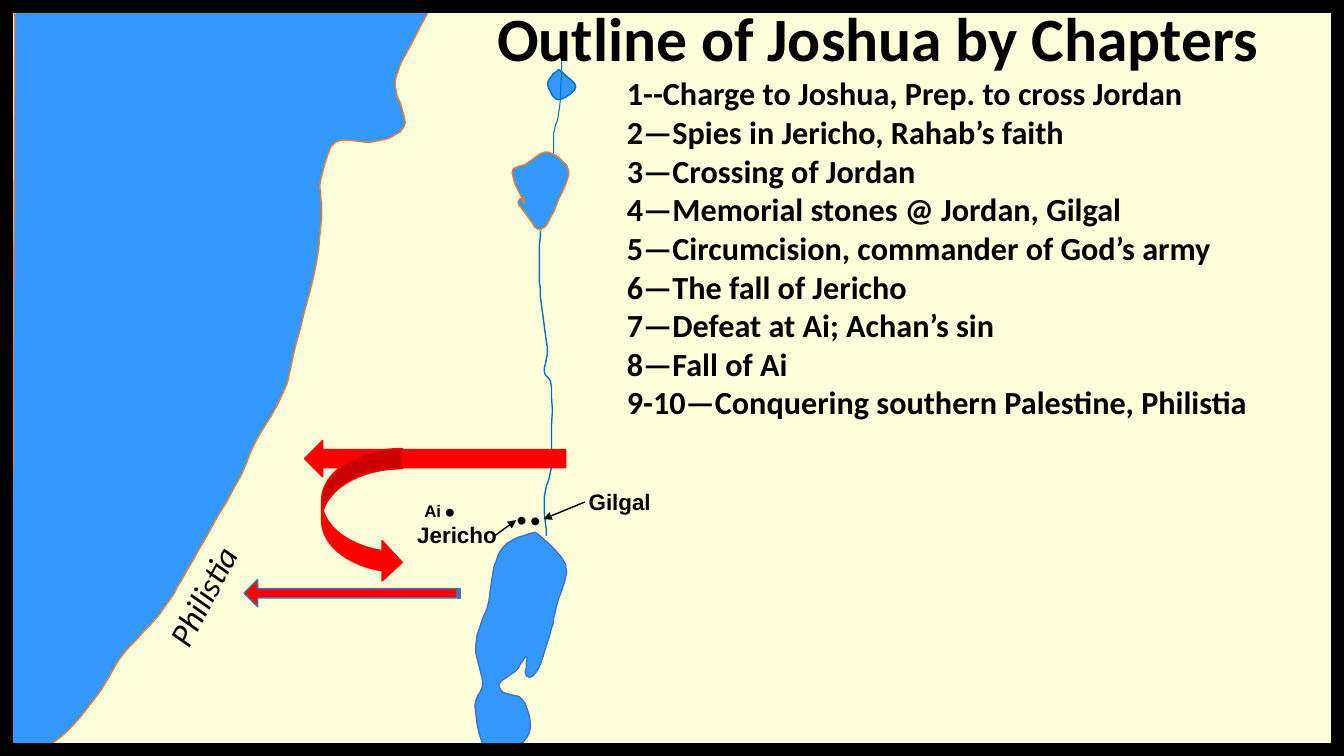
from dataclasses import dataclass

from lxml import etree
from pptx import Presentation
from pptx.dml.color import RGBColor
from pptx.enum.shapes import MSO_CONNECTOR, MSO_SHAPE
from pptx.enum.text import MSO_AUTO_SIZE, PP_ALIGN
from pptx.oxml.ns import qn
from pptx.util import Pt

PX = 9144  # EMU; 100 px to the inch
WIDTH, HEIGHT = 1333, 750
CURVE_STEPS = 5

STRAIGHT = MSO_CONNECTOR.STRAIGHT
LEFT_ARROW = MSO_SHAPE.LEFT_ARROW
CURVED_ARROW = MSO_SHAPE.CURVED_RIGHT_ARROW
STRIPED_ARROW = MSO_SHAPE.STRIPED_RIGHT_ARROW
RECTANGLE = MSO_SHAPE.RECTANGLE
GROW = MSO_AUTO_SIZE.SHAPE_TO_FIT_TEXT
CENTER = PP_ALIGN.CENTER

LAND, WATER, RIVER, COAST, SHORE = "FEFFDA", "3399FF", "0070C0", "ED7D31", "4472C4"
BLACK, RED = "000000", "FF0000"

Point = tuple[float, float]
Box = tuple[int, int, int, int]


@dataclass
class Water:
    bank: list[Point]
    line: str
    corners: tuple[Point, ...] = ()
    weight: float = 1
    closed: bool = True


@dataclass
class Label:
    text: str
    box: Box
    size: int = 16
    font: str = "Arial"
    bold: bool = False
    italic: bool = False
    rotation: int = 0


@dataclass
class Preset:
    kind: MSO_SHAPE
    box: Box
    line: str
    fill: str | None = RED
    weight: float = 1
    rotation: int = 0
    adjustments: tuple[float, ...] = ()


MEDITERRANEAN = Water(
    [(14, 762), (64, 728), (100, 685), (122, 649), (157, 611), (181, 574),
     (210, 523), (240, 470), (252, 441), (281, 389), (294, 340), (314, 260),
     (319, 208), (318, 179), (333, 141), (368, 141), (390, 135), (402, 121),
     (393, 90), (395, 70), (422, 17), (469, -66), (524, -150), (558, -275),
     (581, -297)],
    COAST, corners=((16, -299), (13, 463), (6, 630), (10, 766)))
HULEH = Water([(554, 69), (543, 83), (554, 99), (571, 86), (554, 69)], RIVER)
GALILEE = Water(
    [(520, 202), (508, 171), (523, 162), (544, 151), (564, 169), (554, 198),
     (543, 222), (533, 227), (520, 210), (514, 201), (519, 196)], COAST)
DEAD_SEA = Water(
    [(531, 528), (503, 539), (490, 562), (485, 596), (472, 640), (479, 678),
     (471, 700), (480, 743), (495, 750), (514, 741), (526, 722), (518, 694),
     (499, 687), (496, 677), (511, 666), (522, 651), (522, 670), (533, 665),
     (547, 623), (552, 601), (561, 560), (531, 528)], SHORE)
JORDAN = Water(
    [(536, 229), (535, 271), (538, 309), (543, 345), (540, 369), (547, 384),
     (547, 446), (546, 468), (540, 493), (542, 532)], RIVER, closed=False)
UPPER_JORDAN = Water(
    [(557, 58), (555, 106), (549, 133), (549, 152)], RIVER, weight=0.75, closed=False)
WATERS = [MEDITERRANEAN, HULEH, GALILEE, DEAD_SEA, JORDAN, UPPER_JORDAN]

LABELS = [
    Label("•", (431, 488, 47, 37), font="Calibri"),
    Label("•", (516, 499, 47, 37), font="Calibri", rotation=15),
    Label("•", (502, 496, 25, 37), font="Calibri"),
    Label("Gilgal", (574, 479, 98, 37), bold=True),
    Label("Jericho", (404, 512, 103, 37), bold=True),
    Label("Ai", (411, 492, 46, 30), 12, bold=True),
    Label("Philistia", (118, 533, 200, 50), 24, "Calibri", italic=True, rotation=298),
]

POINTERS = [((580, 498), (539, 515)), ((490, 532), (512, 516))]

PRESETS = [
    Preset(LEFT_ARROW, (302, 437, 259, 36), RED),
    Preset(CURVED_ARROW, (319, 445, 80, 133), RED),
    Preset(STRIPED_ARROW, (242, 575, 215, 27), "43739E", rotation=180,
           adjustments=(0.34, 0.5)),
    Preset(RECTANGLE, (0, 0, WIDTH, HEIGHT), BLACK, fill=None, weight=18),
]

OUTLINE_BOX = (419, -5, 904, 433)
CHAPTER_INDENT = 193
TITLE = "Outline of Joshua by Chapters"
CHAPTERS = [
    "1--Charge to Joshua, Prep. to cross Jordan",
    "2—Spies in Jericho, Rahab’s faith",
    "3—Crossing of Jordan",
    "4—Memorial stones @ Jordan, Gilgal",
    "5—Circumcision, commander of God’s army",
    "6—The fall of Jericho",
    "7—Defeat at Ai; Achan’s sin",
    "8—Fall of Ai",
    "9-10—Conquering southern Palestine, Philistia",
]


def rgb(color: str) -> RGBColor:
    return RGBColor.from_string(color)


def emu(lengths: tuple[int, ...]) -> list[int]:
    return [n * PX for n in lengths]


def smooth(points: list[Point]) -> list[Point]:
    """Return a Catmull-Rom curve through the points, as short segments."""
    padded = [points[0], *points, points[-1]]
    curve = [points[0]]
    for knots in zip(padded, padded[1:], padded[2:], padded[3:]):
        for step in range(1, CURVE_STEPS + 1):
            t = step / CURVE_STEPS
            x, y = (
                b + t * (c - a + t * (2 * a - 5 * b + 4 * c - d
                                      + t * (3 * b - a - 3 * c + d))) / 2
                for a, b, c, d in zip(*knots))
            curve.append((x, y))
    return curve


def paint(sp, fill: str | None, line: str, weight: float) -> None:
    sp.shadow.inherit = False
    if fill:
        sp.fill.solid()
        sp.fill.fore_color.rgb = rgb(fill)
    else:
        sp.fill.background()
    sp.line.color.rgb = rgb(line)
    sp.line.width = Pt(weight)


def draw_water(s, water: Water) -> None:
    start, *others = [*smooth(water.bank), *water.corners]
    builder = s.shapes.build_freeform(*start, scale=PX)
    builder.add_line_segments(others, close=water.closed)
    paint(builder.convert_to_shape(), WATER if water.closed else None,
          water.line, water.weight)


def draw_preset(s, preset: Preset) -> None:
    sp = s.shapes.add_shape(preset.kind, *emu(preset.box))
    sp.rotation = preset.rotation
    for i, value in enumerate(preset.adjustments):
        sp.adjustments[i] = value
    paint(sp, preset.fill, preset.line, preset.weight)


def add_text_box(s, box: Box):
    sp = s.shapes.add_textbox(*emu(box))
    sp.text_frame.word_wrap = True
    sp.text_frame.auto_size = GROW
    return sp


def style(p, size: int, font: str, bold: bool, italic: bool = False) -> None:
    for r in p.runs:
        r.font.size, r.font.name = Pt(size), font
        r.font.bold, r.font.italic = bold, italic
        r.font.color.rgb = rgb(BLACK)


def draw_label(s, label: Label) -> None:
    sp = add_text_box(s, label.box)
    sp.rotation = label.rotation
    sp.text_frame.text = label.text
    style(sp.text_frame.paragraphs[0], label.size, label.font, label.bold, label.italic)


def draw_outline(s) -> None:
    tf = add_text_box(s, OUTLINE_BOX).text_frame
    tf.text = "\n".join([TITLE, *CHAPTERS])
    title, *chapters = tf.paragraphs
    title.alignment = CENTER
    style(title, 44, "Calibri", True)
    for p in chapters:
        p._p.get_or_add_pPr().set("marL", str(CHAPTER_INDENT * PX))
        style(p, 23, "Calibri", True)


def draw_pointer(s, start: tuple[int, int], end: tuple[int, int]) -> None:
    line = s.shapes.add_connector(STRAIGHT, *emu(start + end))
    line.line.color.rgb = rgb(BLACK)
    line.line.width = Pt(1)
    etree.SubElement(line.line._get_or_add_ln(), qn("a:tailEnd"), type="triangle")
    etree.SubElement(line._element.spPr, qn("a:effectLst"))


def main() -> None:
    prs = Presentation()
    prs.slide_width, prs.slide_height = emu((WIDTH, HEIGHT))
    s = prs.slides.add_slide(prs.slide_layouts[6])
    s.background.fill.solid()
    s.background.fill.fore_color.rgb = rgb(LAND)
    for water in WATERS:
        draw_water(s, water)
    draw_outline(s)
    for label in LABELS:
        draw_label(s, label)
    for start, end in POINTERS:
        draw_pointer(s, start, end)
    for preset in PRESETS:
        draw_preset(s, preset)
    prs.save("out.pptx")


if __name__ == "__main__":
    main()
